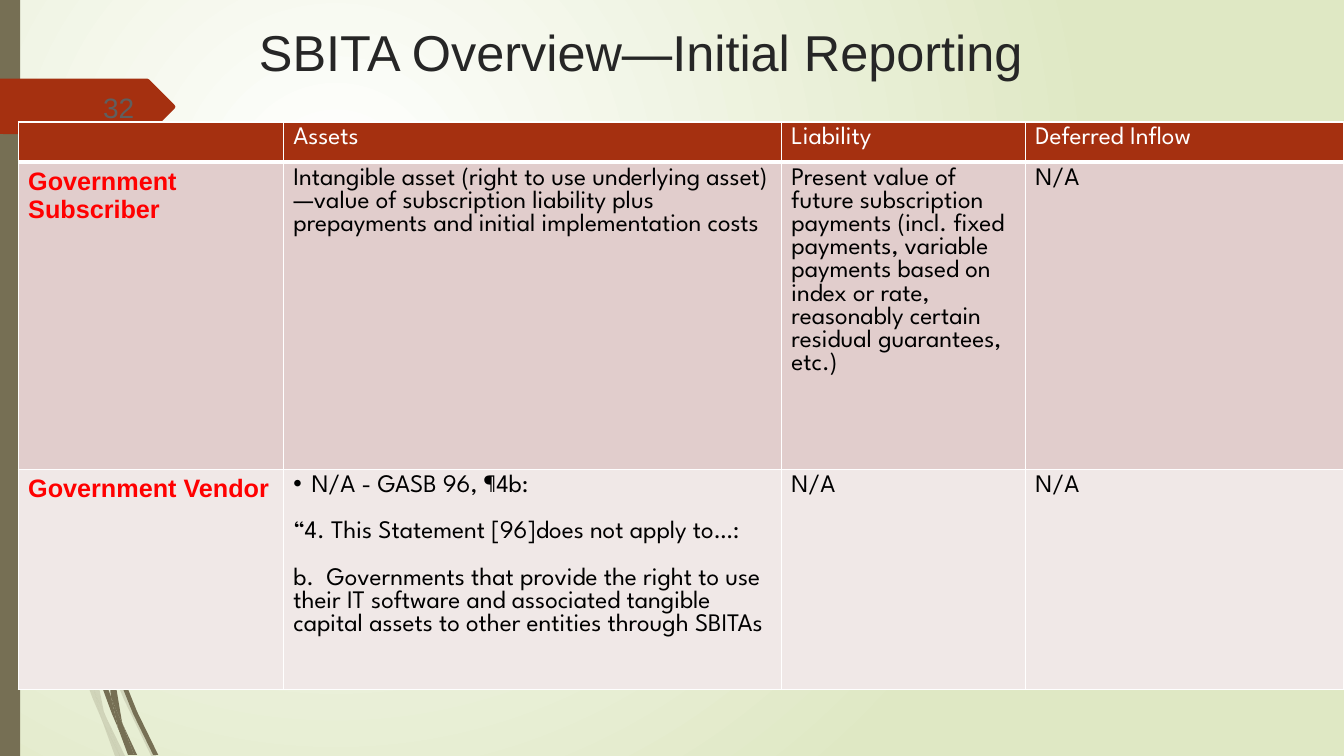
from lxml import etree
from pptx import Presentation
from pptx.dml.color import RGBColor
from pptx.enum.text import MSO_ANCHOR, PP_ALIGN
from pptx.enum.shapes import MSO_SHAPE
from pptx.oxml.ns import qn
from pptx.util import Inches, Pt

LEFT, RIGHT = PP_ALIGN.LEFT, PP_ALIGN.RIGHT
TOP, MIDDLE = MSO_ANCHOR.TOP, MSO_ANCHOR.MIDDLE
RECTANGLE = MSO_SHAPE.RECTANGLE

WHITE = RGBColor(0xFF, 0xFF, 0xFF)
BLACK = RGBColor(0x00, 0x00, 0x00)
RED = RGBColor(0xFF, 0x00, 0x00)
PALE_GREEN = RGBColor(0xDF, 0xE8, 0xC4)
OLIVE = RGBColor(0x76, 0x6F, 0x54)
RUST = RGBColor(0xA5, 0x30, 0x10)
ROSE = RGBColor(0xE1, 0xCD, 0xCC)
PALE_ROSE = RGBColor(0xF0, 0xE8, 0xE7)
TITLE_GREY = RGBColor(0x26, 0x26, 0x26)
NUMBER_GREY = RGBColor(0x5F, 0x5F, 0x5F)

HEADING_FONT = "Arial"
BODY_FONT = "League Spartan"
BLANK_LINE = 16.6

# Grass blades that show below the table, in inches from the slide corner
FAINT_BLADES = [
    [(0.92, 6.07), (0.88, 5.96), (0.88, 6.1), (1.23, 6.94), (1.5, 7.5), (1.55, 7.5), (1.27, 6.92)],
    [(1.19, 7.5), (1.24, 7.5), (1.05, 7.11)],
    [(0.93, 6.83), (0.7, 6.19), (0.31, 4.69), (0.17, 3.76), (0.11, 3.5), (0.28, 4.7),
     (0.65, 6.21), (0.92, 6.93), (1.01, 7.14), (0.99, 7.07)],
    [(0.84, 5.99), (0.87, 6.46), (0.93, 6.83), (0.96, 6.92), (1.05, 7.11), (1.03, 7.06),
     (0.91, 6.46), (0.88, 6.1), (0.88, 6.08)],
    [(1.01, 7.14), (1.14, 7.5), (1.19, 7.5)],
    [(0.96, 6.92), (0.93, 6.83), (0.99, 7.07), (1.01, 7.14), (1.19, 7.5), (1.05, 7.11)],
]
DARK_BLADES = [
    [(1.13, 6.49), (1.1, 6.41), (1.11, 6.56), (1.32, 7.08), (1.52, 7.49), (1.57, 7.49), (1.36, 7.06)],
    [(1.1, 6.91), (0.98, 6.57), (0.72, 5.56), (0.64, 5.05), (0.57, 4.77), (0.68, 5.57),
     (0.93, 6.59), (1.11, 7.08), (1.17, 7.22), (1.16, 7.17)],
    [(1.33, 7.49), (1.36, 7.49), (1.22, 7.19)],
    [(1.17, 7.22), (1.27, 7.49), (1.31, 7.49)],
    [(1.06, 6.45), (1.1, 6.91), (1.16, 7.06), (1.22, 7.19), (1.21, 7.16), (1.11, 6.56), (1.09, 6.51)],
    [(1.16, 7.06), (1.1, 6.91), (1.16, 7.17), (1.17, 7.22), (1.3, 7.49), (1.33, 7.49), (1.22, 7.19)],
]
# Outline of the number tab, relative to its own corner
TAB_OUTLINE = [(0, 0), (1.46, 0), (1.48, 0.01), (1.73, 0.26), (1.74, 0.28),
               (1.73, 0.3), (1.48, 0.55), (1.46, 0.56), (0, 0.55)]

COLUMN_WIDTHS = [2.63, 4.94, 2.42, 3.16]
ROW_HEIGHTS = [0.34, 3.05, 2.18]
ROW_FILLS = [RUST, ROSE, PALE_ROSE]
REPORTING = [
    ["", "Assets", "Liability", "Deferred Inflow"],
    ["Government Subscriber",
     "Intangible asset (right to use underlying asset)—value of subscription liability plus "
     "prepayments and initial implementation costs",
     "Present value of future subscription payments (incl. fixed payments, variable payments "
     "based on index or rate, reasonably certain residual guarantees, etc.)",
     "N/A"],
    ["Government Vendor",
     ["N/A - GASB 96, ¶4b:",
      "“4.\u00a0This Statement [96]does not apply to…:",
      "b.\u00a0 Governments that provide the right to use their IT software and associated "
      "tangible capital assets to other entities through SBITAs"],
     "N/A", "N/A"],
]


def write(frame, text, size=18, font=BODY_FONT, color=BLACK, bold=False, align=LEFT, gap=0):
    """Fill a text frame with one paragraph, or one per item of a list."""
    frame.word_wrap = True
    lines = text if isinstance(text, list) else [text]
    for index, line in enumerate(lines):
        paragraph = frame.paragraphs[0] if index == 0 else frame.add_paragraph()
        paragraph.alignment = align
        if index:
            paragraph.space_before = Pt(gap)
        run = paragraph.add_run()
        run.text = line
        run.font.size, run.font.name, run.font.bold = Pt(size), font, bold
        run.font.color.rgb = color


def add_bullet(paragraph):
    properties = paragraph._p.get_or_add_pPr()
    properties.set("marL", str(Inches(0.18)))
    properties.set("indent", str(-Inches(0.18)))
    etree.SubElement(properties, qn("a:buChar")).set("char", "•")


def set_borders(cell, bottom=1):
    properties = cell._tc.get_or_add_tcPr()
    sides = (("lnL", 1), ("lnR", 1), ("lnT", 1), ("lnB", bottom))
    for position, (side, width) in enumerate(sides):
        line = etree.Element(qn("a:" + side), w=str(Pt(width)))
        fill = etree.SubElement(line, qn("a:solidFill"))
        etree.SubElement(fill, qn("a:srgbClr")).set("val", str(WHITE))
        properties.insert(position, line)


def paint(shape, color, opacity=100):
    shape.shadow.inherit = False
    shape.fill.solid()
    shape.fill.fore_color.rgb = color
    shape.line.fill.background()
    if opacity < 100:
        tone = shape._element.spPr.find(".//" + qn("a:srgbClr"))
        etree.SubElement(tone, qn("a:alpha")).set("val", str(opacity * 1000))


def add_outline(slide, points, color, left=0, top=0, opacity=100):
    corners = [(Inches(left + x), Inches(top + y)) for x, y in points]
    builder = slide.shapes.build_freeform(*corners[0])
    builder.add_line_segments(corners[1:], close=True)
    paint(builder.convert_to_shape(), color, opacity)


def set_background(slide):
    fill = slide.background.fill
    fill.gradient()
    for stop, color in zip(fill.gradient_stops, (WHITE, PALE_GREEN)):
        stop.color.rgb = color
    gradient = slide.element.find(".//" + qn("a:gradFill"))
    linear = gradient.find(qn("a:lin"))
    circle = etree.Element(qn("a:path"), path="circle")
    etree.SubElement(circle, qn("a:fillToRect"), l="50000", t="50000", r="100000", b="100000")
    gradient.replace(linear, circle)


def add_left_edge(slide, width, height):
    for blade in FAINT_BLADES:
        add_outline(slide, blade, OLIVE, opacity=20)
    for blade in DARK_BLADES:
        add_outline(slide, blade, OLIVE)
    bar = slide.shapes.add_shape(RECTANGLE, 0, 0, Inches(width), Inches(height))
    paint(bar, OLIVE)


def add_text(slide, text, left, top, width, height, anchor=TOP, **style):
    box = slide.shapes.add_textbox(Inches(left), Inches(top), Inches(width), Inches(height))
    box.text_frame.vertical_anchor = anchor
    write(box.text_frame, text, **style)


def add_number_tab(slide, left, top):
    add_outline(slide, TAB_OUTLINE, RUST, left, top)
    add_text(slide, "32", left + 0.58, top + 0.08, 0.85, 0.4, anchor=MIDDLE,
             size=20, font=HEADING_FONT, color=NUMBER_GREY, align=RIGHT)


def add_reporting_table(slide, left, top):
    table = slide.shapes.add_table(
        len(ROW_HEIGHTS), len(COLUMN_WIDTHS), Inches(left), Inches(top),
        Inches(sum(COLUMN_WIDTHS)), Inches(sum(ROW_HEIGHTS))).table
    for column, width in zip(table.columns, COLUMN_WIDTHS):
        column.width = Inches(width)
    for r, (height, fill, entries) in enumerate(zip(ROW_HEIGHTS, ROW_FILLS, REPORTING)):
        table.rows[r].height = Inches(height)
        for c, entry in enumerate(entries):
            cell = table.cell(r, c)
            cell.fill.solid()
            cell.fill.fore_color.rgb = fill
            set_borders(cell, bottom=3 if r == 0 else 1)
            if not entry:
                cell.margin_top = cell.margin_bottom = 0
            elif r == 0:
                write(cell.text_frame, entry, color=WHITE)
            elif c == 0:
                write(cell.text_frame, entry, font=HEADING_FONT, color=RED, bold=True)
            else:
                write(cell.text_frame, entry, gap=BLANK_LINE)
            if isinstance(entry, list):
                add_bullet(cell.text_frame.paragraphs[0])


def main():
    deck = Presentation()
    deck.slide_width, deck.slide_height = Inches(13.33), Inches(7.5)
    slide = deck.slides.add_slide(deck.slide_layouts[6])
    set_background(slide)
    add_left_edge(slide, 0.2, 7.5)
    add_number_tab(slide, 0, 0.78)
    add_text(slide, "SBITA Overview—Initial Reporting", 2.47, 0.16, 9.75, 1.4,
             size=36, font=HEADING_FONT, color=TITLE_GREY)
    add_reporting_table(slide, 0.18, 1.21)
    deck.save("out.pptx")


if __name__ == "__main__":
    main()
